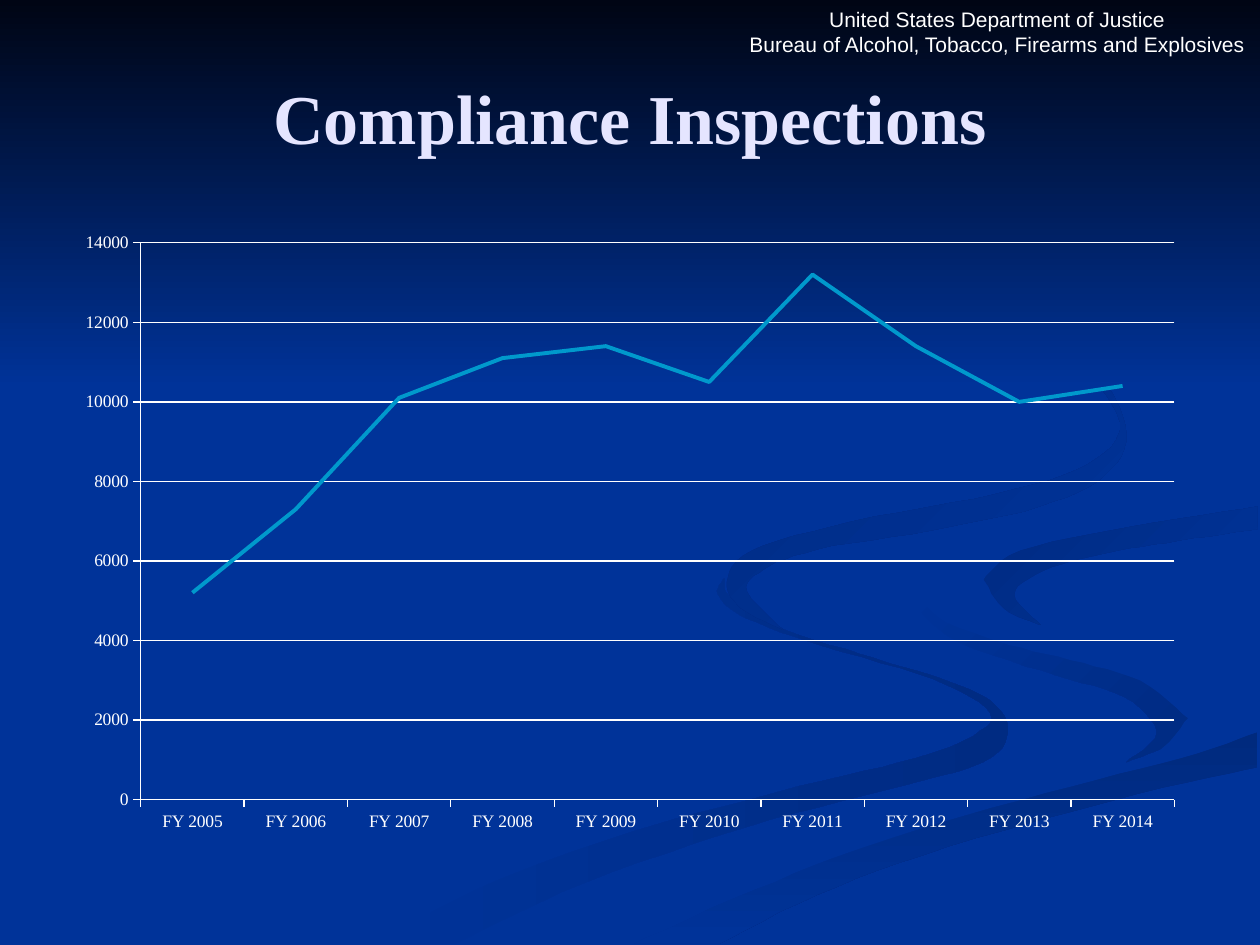
from pptx import Presentation
from pptx.chart.data import CategoryChartData
from pptx.dml.color import RGBColor
from pptx.enum.chart import XL_CHART_TYPE, XL_TICK_MARK
from pptx.enum.shapes import MSO_SHAPE
from pptx.enum.text import MSO_ANCHOR, PP_ALIGN
from pptx.util import Pt

LINE_CHART = XL_CHART_TYPE.LINE
TICK_OUTSIDE = XL_TICK_MARK.OUTSIDE
RECTANGLE = MSO_SHAPE.RECTANGLE
MIDDLE, BOTTOM = MSO_ANCHOR.MIDDLE, MSO_ANCHOR.BOTTOM
CENTER = PP_ALIGN.CENTER

EMU_PER_PX = 9144  # 100 px to the inch
WIDTH, HEIGHT = 1000, 750
CURVE_STEPS = 6
BLUE, NIGHT, WHITE, LAVENDER, CYAN = "003399", "000514", "FFFFFF", "E5E5FF", "0099CC"
SHADE, DEEP_SHADE = "002B82", "002A7E"
SERIF, SANS = "Times New Roman", "Arial"

# Edges where the plain river touches its shaded neighbours
RIVER_BEND = [(724, 464), (745, 490), (792, 509), (850, 524), (905, 540), (943, 570)]
RIVER_BANK = [(998, 581), (936, 602), (831, 629), (696, 669), (599, 706), (503, 749)]
UPPER_BEND = [(998, 402), (898, 418), (810, 437), (781, 460)]

# Each ribbon is a closed round of smooth edges, given by a few knots each
LEFT_RIBBON = [
    [(575, 459), (570, 472), (593, 491), (654, 513), (741, 539), (786, 566),
     (767, 587), (714, 605), (616, 629), (499, 661), (376, 707), (300, 749)],
    [(361, 749), (466, 700), (594, 656), (699, 628), (780, 605), (800, 581),
     (786, 556), (745, 538), (682, 519), (614, 496), (579, 473), (575, 459)],
]
RIVER_SHADE = [
    RIVER_BEND,
    [(943, 570), (932, 589), (894, 605)],
    [(894, 605), (918, 581), (892, 553), (838, 536), (766, 512), (733, 488), (724, 464)],
]
FOREGROUND_RIBBON = [
    RIVER_BANK,
    [(571, 749), (649, 710), (752, 672), (903, 630), (998, 609)],
]
RIVER = [
    [(998, 387), (920, 401), (830, 415), (755, 432), (724, 464)],
    RIVER_BEND,
    [(943, 570), (911, 600), (812, 625), (704, 655), (573, 703), (477, 749)],
    RIVER_BANK[::-1],
    [(998, 538), (941, 527), (866, 509), (804, 485), (781, 460)],
    UPPER_BEND[::-1],
]
UPPER_SHADE = [
    UPPER_BEND,
    [(781, 460), (797, 483), (826, 496)],
    [(826, 496), (805, 472), (828, 453), (878, 439), (936, 429), (998, 420)],
]
TALL_RIBBON = [
    [(762, 233), (821, 261), (873, 299), (894, 344), (876, 378), (825, 402),
     (739, 421), (649, 436), (606, 452), (593, 470), (622, 500)],
    [(622, 500), (590, 484), (577, 462), (597, 437), (676, 414), (791, 392),
     (861, 370), (889, 335), (846, 279), (762, 233)],
]

# Edges, start colour, end colour, clockwise angle of the gradient
RIBBONS = [
    (LEFT_RIBBON, BLUE, SHADE, 0),
    (RIVER_SHADE, BLUE, SHADE, 45),
    (FOREGROUND_RIBBON, DEEP_SHADE, BLUE, 90),
    (RIVER, BLUE, BLUE, 0),
    (UPPER_SHADE, SHADE, BLUE, 45),
    (TALL_RIBBON, SHADE, BLUE, 45),
]

FISCAL_YEARS = [f"FY {year}" for year in range(2005, 2015)]
INSPECTIONS = [5200, 7300, 10100, 11100, 11400, 10500, 13200, 11400, 10000, 10400]


def px(length):
    return length * EMU_PER_PX


def rgb(hex_colour):
    return RGBColor.from_string(hex_colour)


def spline(before, start, end, after, t):
    """Catmull-Rom value between start and end, for t from 0 to 1."""
    return round(start + t / 2 * (
        end - before
        + t * (2 * before - 5 * start + 4 * end - after)
        + t * t * (3 * start - before - 3 * end + after)))


def smooth_edge(knots):
    """Points of a smooth curve that passes through every knot."""
    padded = [knots[0], *knots, knots[-1]]
    points = []
    for quad in zip(padded, padded[1:], padded[2:], padded[3:]):
        xs, ys = zip(*quad)
        for step in range(CURVE_STEPS):
            t = step / CURVE_STEPS
            points.append((spline(*xs, t), spline(*ys, t)))
    return points + [knots[-1]]


class SlideBuilder:
    def __init__(self, slide):
        self.slide = slide

    def background(self, colour):
        fill = self.slide.background.fill
        fill.solid()
        fill.fore_color.rgb = rgb(colour)

    def paint(self, shape, start, end, angle):
        """Fill flat when both colours agree, else with a linear gradient."""
        shape.shadow.inherit = False
        shape.line.fill.background()
        if start == end:
            shape.fill.solid()
            shape.fill.fore_color.rgb = rgb(start)
            return
        shape.fill.gradient()
        shape.fill.gradient_angle = -angle % 360
        for stop, colour, position in zip(shape.fill.gradient_stops, (start, end), (0, 1)):
            stop.color.rgb = rgb(colour)
            stop.position = position

    def ribbon(self, edges, start, end, angle):
        outline = [point for knots in edges for point in smooth_edge(knots)]
        builder = self.slide.shapes.build_freeform(*outline[0], scale=EMU_PER_PX)
        builder.add_line_segments(outline[1:], close=True)
        self.paint(builder.convert_to_shape(), start, end, angle)

    def band(self, box, start, end, angle):
        rectangle = self.slide.shapes.add_shape(RECTANGLE, *map(px, box))
        self.paint(rectangle, start, end, angle)

    def text(self, box, lines, size, font, colour, anchor, bold=False):
        frame = self.slide.shapes.add_textbox(*map(px, box)).text_frame
        frame.word_wrap = True
        frame.vertical_anchor = anchor
        for index, line in enumerate(lines):
            paragraph = frame.add_paragraph() if index else frame.paragraphs[0]
            paragraph.alignment = CENTER
            run = paragraph.add_run()
            run.text = line
            run.font.size, run.font.name, run.font.bold = Pt(size), font, bold
            run.font.color.rgb = rgb(colour)

    def line_chart(self, box, categories, name, values):
        data = CategoryChartData()
        data.categories = categories
        data.add_series(name, values)
        chart = self.slide.shapes.add_chart(LINE_CHART, *map(px, box), data).chart
        chart.has_legend = chart.has_title = False
        chart.font.size, chart.font.name = Pt(10), SERIF
        chart.font.color.rgb = rgb(WHITE)

        years, counts = chart.category_axis, chart.value_axis
        counts.minimum_scale, counts.maximum_scale, counts.major_unit = 0, 14000, 2000
        counts.has_major_gridlines = True
        for axis in (years, counts):
            axis.major_tick_mark = TICK_OUTSIDE
        for ruled in (years, counts, counts.major_gridlines):
            ruled.format.line.color.rgb = rgb(WHITE)
            ruled.format.line.width = Pt(0.75)

        plot = chart.plots[0]
        plot.vary_by_categories = False
        trend = plot.series[0]
        trend.smooth = False
        trend.format.line.color.rgb = rgb(CYAN)
        trend.format.line.width = Pt(2.25)


def main():
    deck = Presentation()
    deck.slide_width, deck.slide_height = px(WIDTH), px(HEIGHT)
    page = SlideBuilder(deck.slides.add_slide(deck.slide_layouts[6]))
    page.background(BLUE)
    for ribbon in RIBBONS:
        page.ribbon(*ribbon)
    page.band((0, 0, WIDTH, 308), NIGHT, BLUE, 90)
    page.text((583, 6, 417, 44),
              ["United States Department of Justice",
               "Bureau of Alcohol, Tobacco, Firearms and Explosives"],
              12, SANS, WHITE, BOTTOM)
    page.text((50, 30, 900, 125), ["Compliance Inspections"],
              40, SERIF, LAVENDER, MIDDLE, bold=True)
    page.line_chart((50, 175, 900, 495), FISCAL_YEARS, "Series 1", INSPECTIONS)
    deck.save("out.pptx")


if __name__ == "__main__":
    main()
